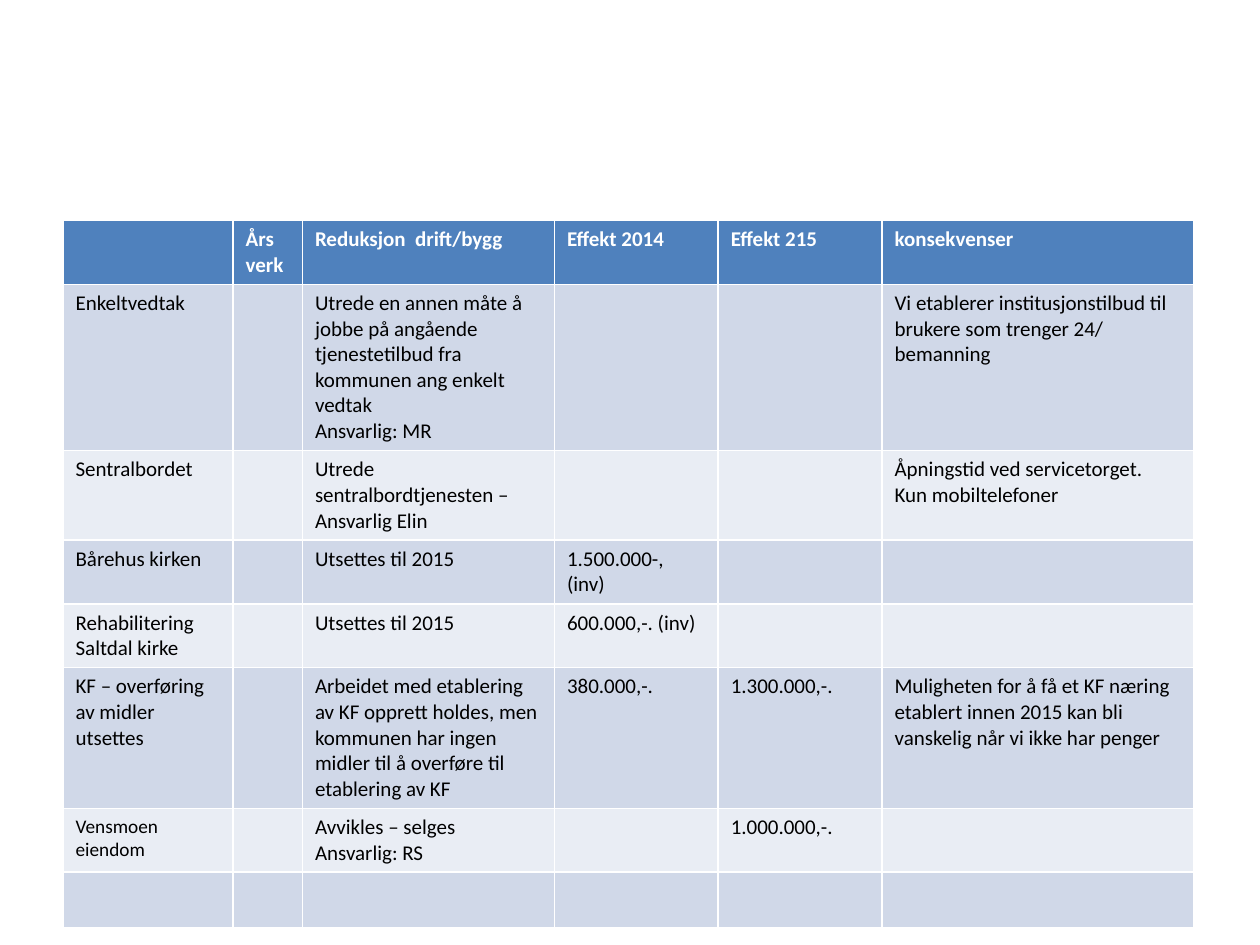
from pptx import Presentation
from pptx.dml.color import RGBColor
from pptx.util import Pt

COLUMN_WIDTHS = [97.2, 39.6, 144, 93.6, 93.6, 178]
ROW_HEIGHTS = [22.5, 49.5, 49.5, 31.5, 22.5, 76.5, 31.5, 31.5]
HEADER_FILL = "4F81BD"
BAND_FILLS = ["E9EDF4", "D0D8E8"]
SMALL_TEXT = "Vensmoen eiendom"

ROWS = [
    ["", "Års\nverk", "Reduksjon  drift/bygg", "Effekt 2014", "Effekt 215", "konsekvenser"],
    ["Enkeltvedtak", "",
     "Utrede en annen måte å jobbe på angående tjenestetilbud fra kommunen ang enkelt vedtak\n"
     "Ansvarlig: MR", "", "",
     "Vi etablerer institusjonstilbud til brukere som trenger 24/ bemanning"],
    ["Sentralbordet", "", "Utrede sentralbordtjenesten –\nAnsvarlig Elin", "", "",
     "Åpningstid ved servicetorget.\nKun mobiltelefoner"],
    ["Bårehus kirken", "", "Utsettes til 2015", "1.500.000-, (inv)", "", ""],
    ["Rehabilitering Saltdal kirke", "", "Utsettes til 2015", "600.000,-. (inv)", "", ""],
    ["KF – overføring av midler utsettes", "",
     "Arbeidet med etablering av KF opprett holdes, men kommunen har ingen midler "
     "til å overføre til etablering av KF", "380.000,-.", "1.300.000,-.",
     "Muligheten for å få et KF næring etablert innen 2015 kan bli vanskelig "
     "når vi ikke har penger"],
    [SMALL_TEXT, "", "Avvikles – selges\nAnsvarlig: RS", "", "1.000.000,-.", ""],
    [""] * 6,
]


def color(hex_string):
    return RGBColor.from_string(hex_string)


def fill_cell(cell, text, fill, text_color, bold):
    cell.fill.solid()
    cell.fill.fore_color.rgb = color(fill)
    cell.text = text
    for paragraph in cell.text_frame.paragraphs:
        font = paragraph.font
        font.name = "Calibri"
        font.size = Pt(11 if text == SMALL_TEXT else 12)
        font.bold = bold
        font.color.rgb = color(text_color)


def add_savings_table(slide, left, top, width, height):
    """The default table style supplies the white borders."""
    frame = slide.shapes.add_table(len(ROWS), len(COLUMN_WIDTHS),
                                   Pt(left), Pt(top), Pt(width), Pt(height))
    table = frame.table
    for column, column_width in zip(table.columns, COLUMN_WIDTHS):
        column.width = Pt(column_width)
    for index, (row, texts) in enumerate(zip(table.rows, ROWS)):
        row.height = Pt(ROW_HEIGHTS[index])
        header = index == 0
        fill = HEADER_FILL if header else BAND_FILLS[index % 2]
        for cell, text in zip(row.cells, texts):
            fill_cell(cell, text, fill, "FFFFFF" if header else "000000", header)
    frame.height = Pt(height)


def main():
    presentation = Presentation()
    presentation.slide_width = Pt(720)
    presentation.slide_height = Pt(540)
    slide = presentation.slides.add_slide(presentation.slide_layouts[6])
    add_savings_table(slide, 36, 126, sum(COLUMN_WIDTHS), 399)
    presentation.save("out.pptx")


if __name__ == "__main__":
    main()
